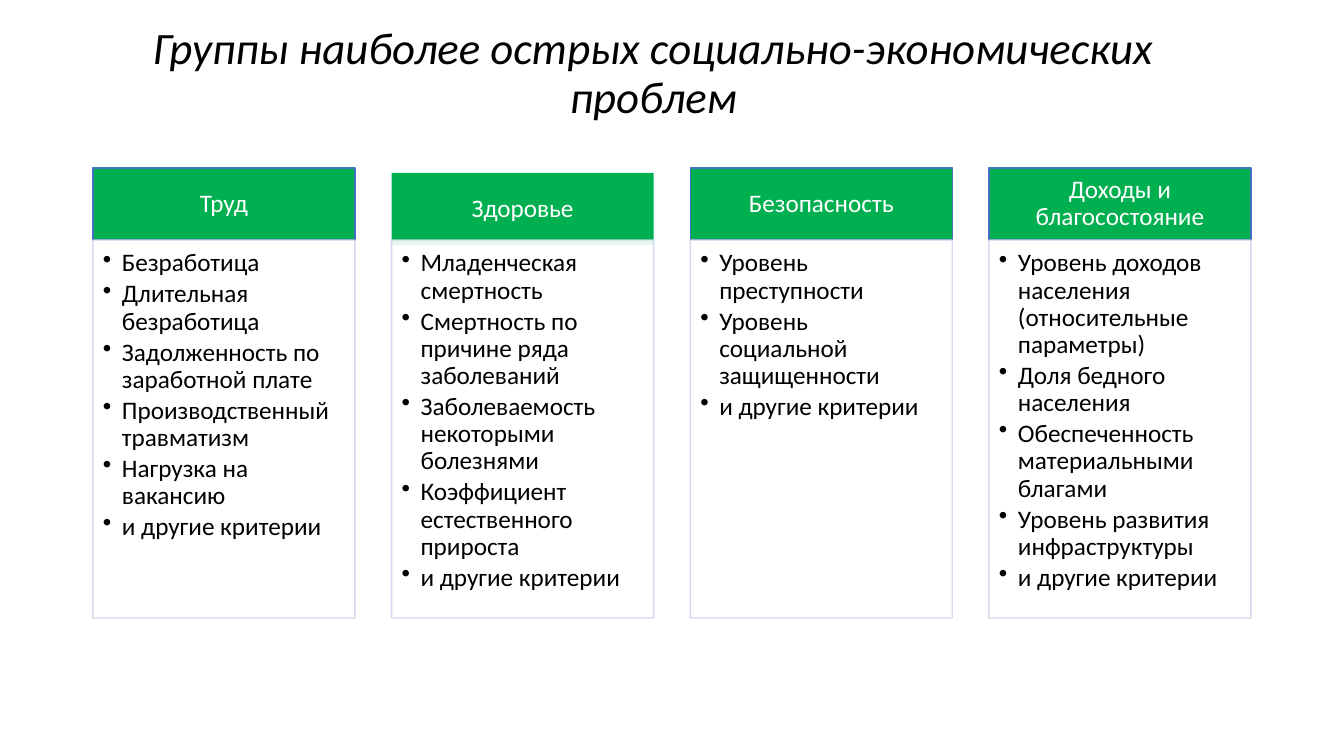
"""Build a slide with four groups of social and economic problems."""
from dataclasses import dataclass

from lxml.etree import SubElement
from pptx import Presentation
from pptx.dml.color import RGBColor as Rgb
from pptx.enum.shapes import MSO_SHAPE as Preset
from pptx.enum.text import MSO_ANCHOR as Anchor, PP_ALIGN as Align
from pptx.oxml.ns import qn
from pptx.util import Pt

TITLE = "Группы наиболее острых социально-экономических проблем"
OTHER = "и другие критерии"
GROUPS = [
    ("Труд", ["Безработица", "Длительная безработица",
              "Задолженность по заработной плате",
              "Производственный травматизм", "Нагрузка на вакансию", OTHER]),
    ("Здоровье", ["Младенческая смертность",
                  "Смертность по причине ряда заболеваний",
                  "Заболеваемость некоторыми болезнями",
                  "Коэффициент естественного прироста", OTHER]),
    ("Безопасность", ["Уровень преступности",
                      "Уровень социальной защищенности", OTHER]),
    ("Доходы и благосостояние", [
        "Уровень доходов населения (относительные параметры)",
        "Доля бедного населения", "Обеспеченность материальными благами",
        "Уровень развития инфраструктуры", OTHER]),
]
LOWERED = "Здоровье"

PX = 914400 / 100.8
SLIDE_SIZE = (1344, 756)
TITLE_BOX = (57, 29, 1193, 91)
LEFT, RIGHT, COLUMN_WIDTH = 93, 1251, 262
HEADING_TOP, HEADING_HEIGHT, HEADING_DROP = 168, 72, 5
CRITERIA_TOP, CRITERIA_HEIGHT = 240, 378
HEADING_INSETS = (14, 8, 14, 8)
CRITERIA_INSETS = (10, 10, 14, 16)
BULLET_INDENT = 19


@dataclass(frozen=True)
class Theme:
    font: str = "Calibri"
    title_size: int = 32
    text_size: int = 18
    ink: str = "000000"
    paper: str = "FFFFFF"
    heading: str = "00B050"
    heading_edge: str = "4472C4"
    criteria_edge: str = "CFD5EA"
    criteria_opacity: int = 90


THEME = Theme()


def px(length):
    return round(length * PX)


def write(box, lines, size, color, insets, anchor, align, gap=0, italic=False):
    frame = box.text_frame
    frame.word_wrap = True
    frame.vertical_anchor = anchor
    (frame.margin_left, frame.margin_top,
     frame.margin_right, frame.margin_bottom) = map(px, insets)
    frame.text = "\n".join(lines)
    for paragraph in frame.paragraphs:
        paragraph.alignment = align
        paragraph.line_spacing = 0.9
        paragraph.space_after = Pt(gap)
        font = paragraph.font
        font.name, font.size, font.italic = THEME.font, Pt(size), italic
        font.color.rgb = Rgb.from_string(color)


def add_panel(slide, bounds, fill, edge):
    panel = slide.shapes.add_shape(Preset.RECTANGLE, *map(px, bounds))
    panel.shadow.inherit = False
    panel.fill.solid()
    panel.fill.fore_color.rgb = Rgb.from_string(fill)
    if edge:
        panel.line.color.rgb = Rgb.from_string(edge)
        panel.line.width = Pt(1)
    else:
        panel.line.fill.background()
    return panel


def make_translucent(panel):
    for color in panel.fill._xPr.iter(qn("a:srgbClr")):
        SubElement(color, qn("a:alpha"), val=str(THEME.criteria_opacity * 1000))


def add_bullets(panel):
    for paragraph in panel.text_frame.paragraphs:
        properties = paragraph._p.get_or_add_pPr()
        properties.set("marL", str(px(BULLET_INDENT)))
        properties.set("indent", str(-px(BULLET_INDENT)))
        bullet = properties.makeelement(qn("a:buChar"), {"char": "•"})
        properties.find(qn("a:defRPr")).addprevious(bullet)


def add_group(slide, left, name, criteria):
    lowered = name == LOWERED
    top = HEADING_TOP + (HEADING_DROP if lowered else 0)
    heading = add_panel(slide, (left, top, COLUMN_WIDTH, HEADING_HEIGHT),
                        THEME.heading, None if lowered else THEME.heading_edge)
    write(heading, [name], THEME.text_size, THEME.paper, HEADING_INSETS,
          Anchor.MIDDLE, Align.CENTER)
    body = add_panel(slide, (left, CRITERIA_TOP, COLUMN_WIDTH, CRITERIA_HEIGHT),
                     THEME.paper, THEME.criteria_edge)
    make_translucent(body)
    write(body, criteria, THEME.text_size, THEME.ink, CRITERIA_INSETS,
          Anchor.TOP, Align.LEFT, gap=0.15 * THEME.text_size)
    add_bullets(body)


def main():
    deck = Presentation()
    deck.slide_width, deck.slide_height = map(px, SLIDE_SIZE)
    slide = deck.slides.add_slide(deck.slide_layouts[6])
    title = slide.shapes.add_textbox(*map(px, TITLE_BOX))
    write(title, [TITLE], THEME.title_size, THEME.ink, (10, 5, 10, 5),
          Anchor.MIDDLE, Align.CENTER, italic=True)
    pitch = (RIGHT - LEFT - COLUMN_WIDTH) / (len(GROUPS) - 1)
    for column, (name, criteria) in enumerate(GROUPS):
        add_group(slide, LEFT + column * pitch, name, criteria)
    deck.save("out.pptx")


if __name__ == "__main__":
    main()
